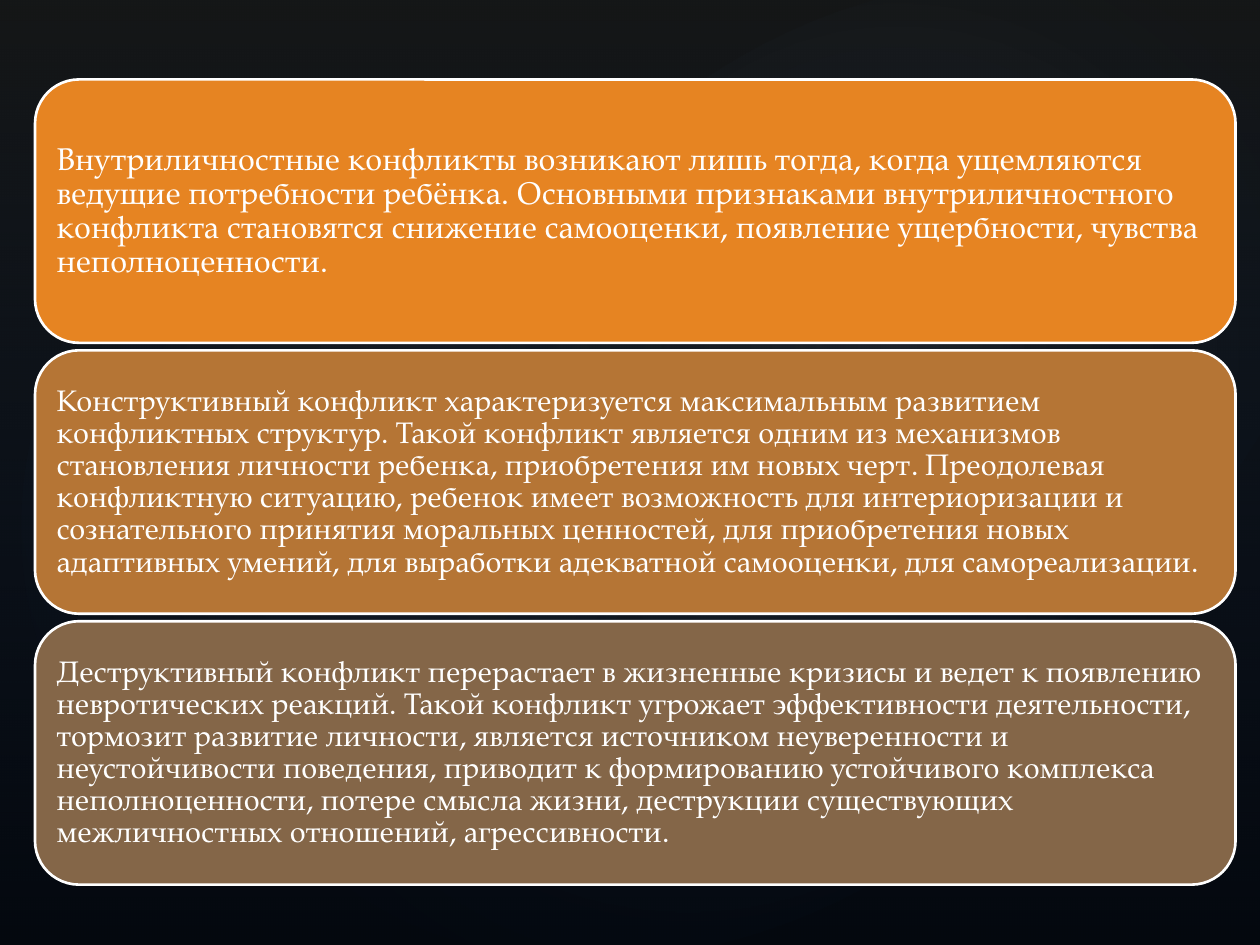
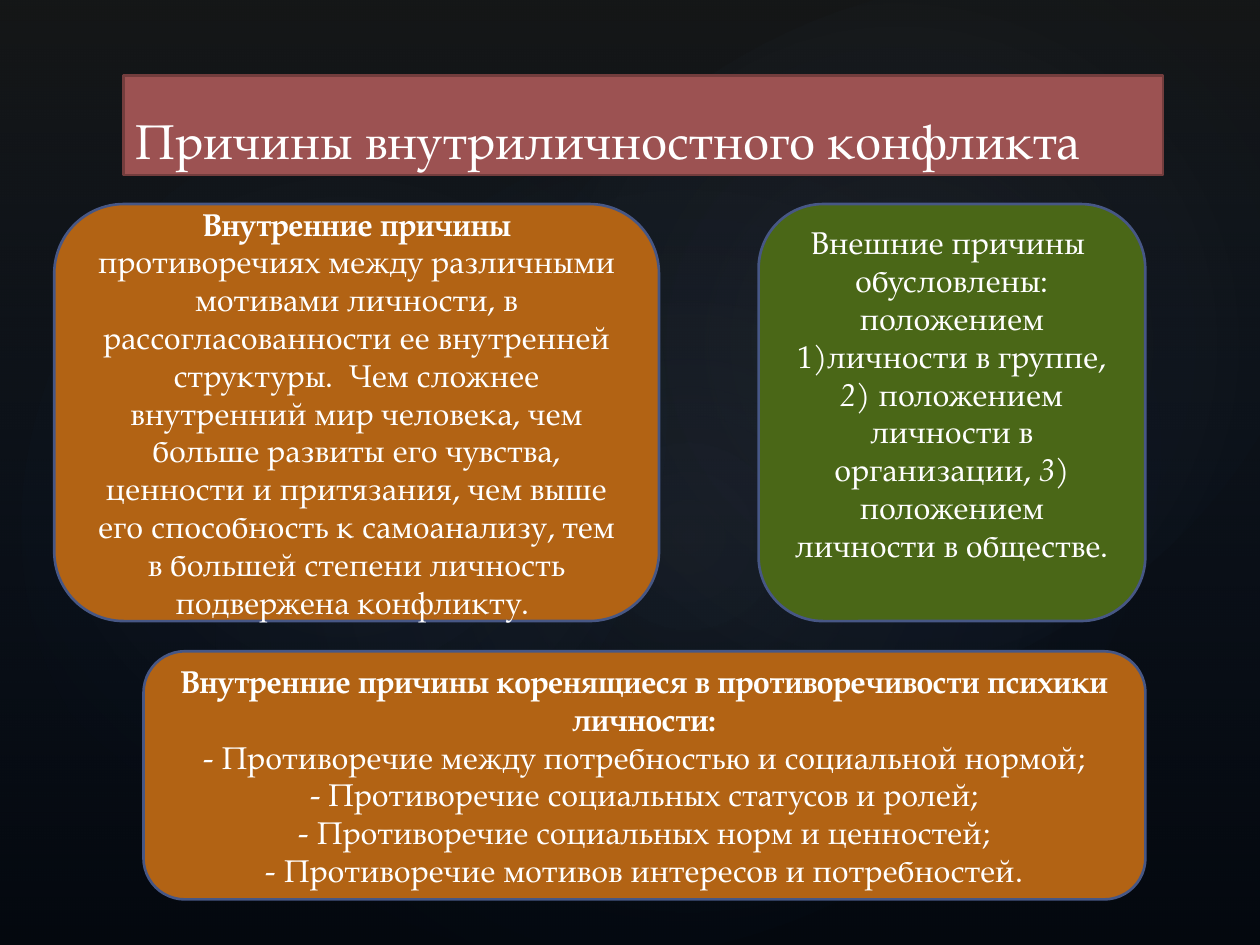
from lxml import etree
from pptx import Presentation
from pptx.dml.color import RGBColor
from pptx.enum.shapes import MSO_SHAPE
from pptx.enum.text import MSO_ANCHOR, PP_ALIGN
from pptx.oxml.ns import qn
from pptx.util import Pt

RECT, ROUNDED, OVAL = MSO_SHAPE.RECTANGLE, MSO_SHAPE.ROUNDED_RECTANGLE, MSO_SHAPE.OVAL
LEFT, CENTER = PP_ALIGN.LEFT, PP_ALIGN.CENTER
MIDDLE, BOTTOM = MSO_ANCHOR.MIDDLE, MSO_ANCHOR.BOTTOM


class Theme:
    font = "TeX Gyre Pagella"
    title_size, body_size, dense_size = 28, 18, 17
    line_width = 1.5
    backdrop, charcoal, mist, navy = "000000", "3B4042", "ACB3B6", "2F5897"
    white = "FFFFFF"
    orange, amber, brown = "E68422", "B57535", "846648"
    title_fill, title_line = "9C5252", "733D3D"
    internal, external, cause_line = "B26314", "4A6717", "475785"


def fill_gradient(shape, stops, direction):
    """Fill with (position %, colour, opacity %) stops; direction is 'linear' or 'radial'."""
    shape.fill.background()
    gradient = etree.Element(qn("a:gradFill"), rotWithShape="1")
    stop_list = etree.SubElement(gradient, qn("a:gsLst"))
    for position, color, opacity in stops:
        stop = etree.SubElement(stop_list, qn("a:gs"), pos=str(position * 1000))
        rgb = etree.SubElement(stop, qn("a:srgbClr"), val=color)
        etree.SubElement(rgb, qn("a:alpha"), val=str(opacity * 1000))
    if direction == "linear":
        etree.SubElement(gradient, qn("a:lin"), ang="5400000", scaled="0")
    else:
        circle = etree.SubElement(gradient, qn("a:path"), path="circle")
        etree.SubElement(circle, qn("a:fillToRect"), l="50000", t="50000", r="50000", b="50000")
    properties = shape.element.spPr
    properties.replace(properties.find(qn("a:noFill")), gradient)


def add_card(slide, kind, box, fill, line, paragraphs, size=Theme.body_size,
             align=CENTER, spacing=1.0, **frame_format):
    """Add a filled shape; each paragraph is a list of (text, font format) runs."""
    card = slide.shapes.add_shape(kind, *map(Pt, box))
    card.shadow.inherit = False
    card.fill.solid()
    card.fill.fore_color.rgb = RGBColor.from_string(fill)
    card.line.color.rgb = RGBColor.from_string(line)
    card.line.width = Pt(Theme.line_width)
    frame = card.text_frame
    for name, value in {"word_wrap": True, "vertical_anchor": MIDDLE, **frame_format}.items():
        setattr(frame, name, value)
    for index, runs in enumerate(paragraphs):
        paragraph = frame.paragraphs[0] if index == 0 else frame.add_paragraph()
        paragraph.alignment = align
        paragraph.line_spacing = spacing
        for text, font_format in runs:
            run = paragraph.add_run()
            run.text = text
            run.font.color.rgb = RGBColor.from_string(Theme.white)
            for name, value in {"name": Theme.font, "size": Pt(size), **font_format}.items():
                setattr(run.font, name, value)


prs = Presentation()
prs.slide_width, prs.slide_height = Pt(720), Pt(540)
blank = prs.slide_layouts[6]
conflict_types = prs.slides.add_slide(blank)
conflict_causes = prs.slides.add_slide(blank)

# Shared backdrop: shapes are drawn on a slide, then moved to the master
master = prs.slide_master
master.background.fill.solid()
master.background.fill.fore_color.rgb = RGBColor.from_string(Theme.backdrop)
shade = [(0, Theme.charcoal, 36), (100, Theme.navy, 10)]
faint_glow, glow = ([(0, Theme.mist, opacity), (58, Theme.navy, 0)] for opacity in (7, 8))
backdrop_layers = [
    (RECT, (0, 0, 720, 540), 0, shade, "linear"),
    (OVAL, (108, 82, 570, 449), 328.7, faint_glow, "radial"),
    (OVAL, (-21.6, 92, 436, 353), 294.3, glow, "radial"),
    (OVAL, (258, 9.4, 510.5, 374.4), 328.7, glow, "radial"),
]
for number, (kind, box, rotation, stops, direction) in enumerate(backdrop_layers):
    layer = conflict_types.shapes.add_shape(kind, *map(Pt, box))
    layer.rotation = rotation
    layer.shadow.inherit = False
    fill_gradient(layer, stops, direction)
    layer.line.fill.background()
    layer.element.nvSpPr.cNvPr.set("id", str(100 + number))
    master.shapes.element.append(layer.element)

# Slide 1: kinds of conflict
descriptions = [
    (Theme.orange, Theme.body_size,
     "Внутриличностные конфликты возникают лишь тогда, когда ущемляются ведущие потребности "
     "ребёнка. Основными признаками внутриличностного конфликта становятся снижение самооценки, "
     "появление ущербности, чувства неполноценности."),
    (Theme.amber, Theme.dense_size,
     "Конструктивный конфликт характеризуется максимальным развитием конфликтных структур. "
     "Такой конфликт является одним из механизмов становления личности ребенка, приобретения "
     "им новых черт. Преодолевая конфликтную ситуацию, ребенок имеет возможность для "
     "интериоризации и сознательного принятия моральных ценностей, для приобретения новых "
     "адаптивных умений, для выработки адекватной самооценки, для самореализации."),
    (Theme.brown, Theme.dense_size,
     "Деструктивный конфликт перерастает в жизненные кризисы и ведет к появлению невротических "
     "реакций. Такой конфликт угрожает эффективности деятельности, тормозит развитие личности, "
     "является источником неуверенности и неустойчивости поведения, приводит к формированию "
     "устойчивого комплекса неполноценности, потере смысла жизни, деструкции существующих "
     "межличностных отношений, агрессивности."),
]
margins = dict.fromkeys(("margin_left", "margin_top", "margin_right", "margin_bottom"), Pt(5))
card_height, card_gap = 150.5, 4.3
for row, (color, size, text) in enumerate(descriptions):
    top = 45.4 + row * (card_height + card_gap)
    add_card(conflict_types, ROUNDED, (20, top, 686, card_height), color, Theme.white,
             [[(text, {})]], size, LEFT, 0.9, **margins)

# Slide 2: causes of conflict
bold, italic = {"bold": True}, {"italic": True}
add_card(conflict_causes, RECT, (70.6, 43.2, 594, 56.9), Theme.title_fill, Theme.title_line,
         [[("Причины внутриличностного конфликта", {})]], Theme.title_size, LEFT,
         vertical_anchor=BOTTOM)

internal_causes = [
    [("Внутренние причины", bold)],
    [("противоречиях между различными мотивами личности, в рассогласованности ее внутренней "
      "структуры.  Чем сложнее внутренний мир человека, чем больше развиты его чувства, "
      "ценности и притязания, чем выше его способность к самоанализу, тем в большей степени "
      "личность подвержена конфликту. ", {})],
]
external_causes = [
    [("Внешние причины ", {})],
    [("обусловлены: положением 1)личности в группе, ", {}), ("2)", italic),
     (" положением личности в организации, ", {}), ("3)", italic),
     (" положением личности в обществе.", {})],
]
contradictions = [
    [("Внутренние причины коренящиеся в противоречивости психики личности:", bold)],
    [("- Противоречие между потребностью и социальной нормой;", {})],
    [("- Противоречие социальных статусов и ролей;", {})],
    [("- Противоречие социальных норм и ценностей;", {})],
    [("- Противоречие мотивов интересов и потребностей.", {})],
]
cause_cards = [
    ((31, 116.6, 345.6, 238.3), Theme.internal, internal_causes, {}),
    ((433.5, 116.6, 221, 238.3), Theme.external, external_causes, {"margin_bottom": Pt(25.3)}),
    ((82, 372.2, 572.5, 141.8), Theme.internal, contradictions, {}),
]
for box, color, causes, frame_format in cause_cards:
    add_card(conflict_causes, ROUNDED, box, color, Theme.cause_line, causes, **frame_format)

prs.save("out.pptx")
